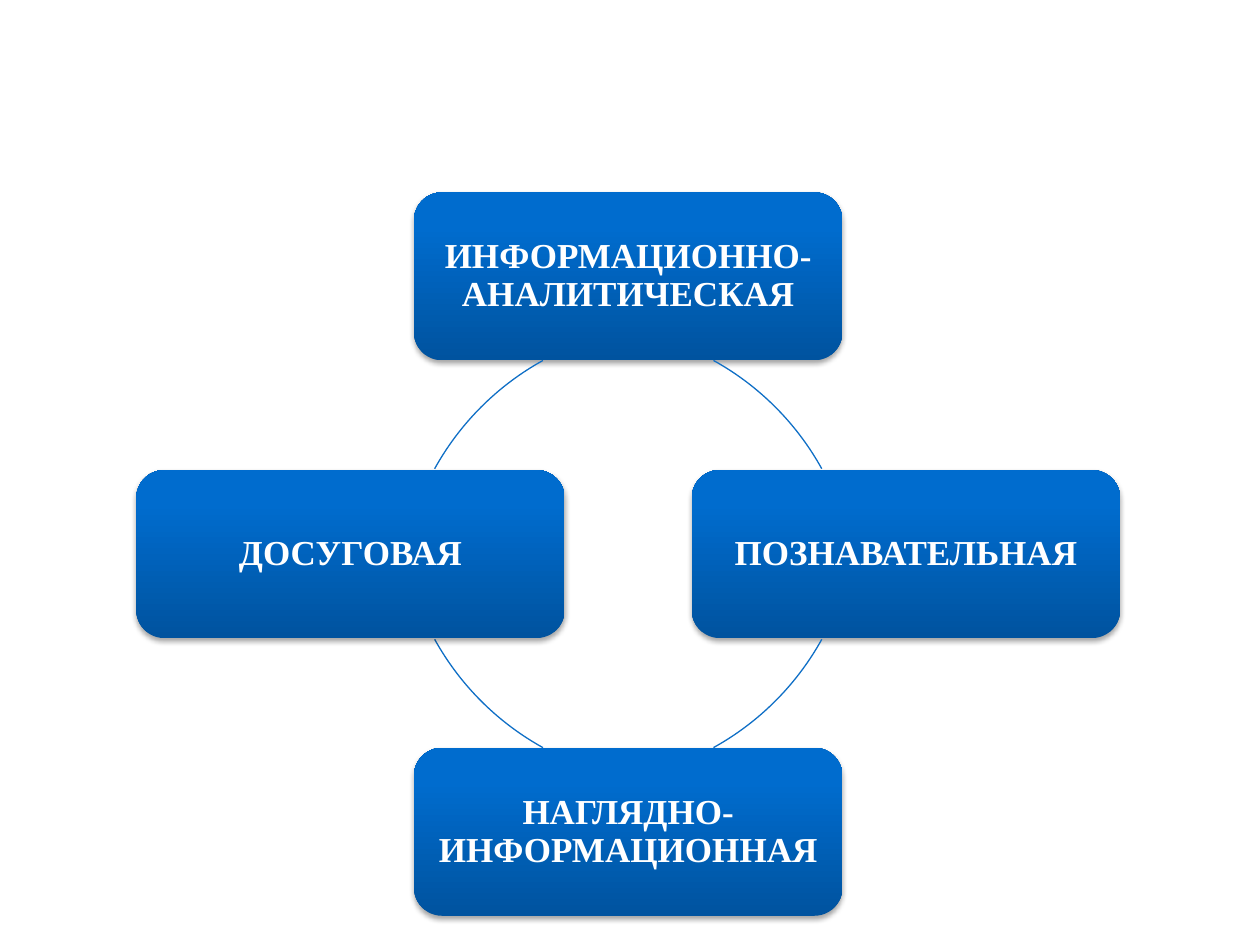
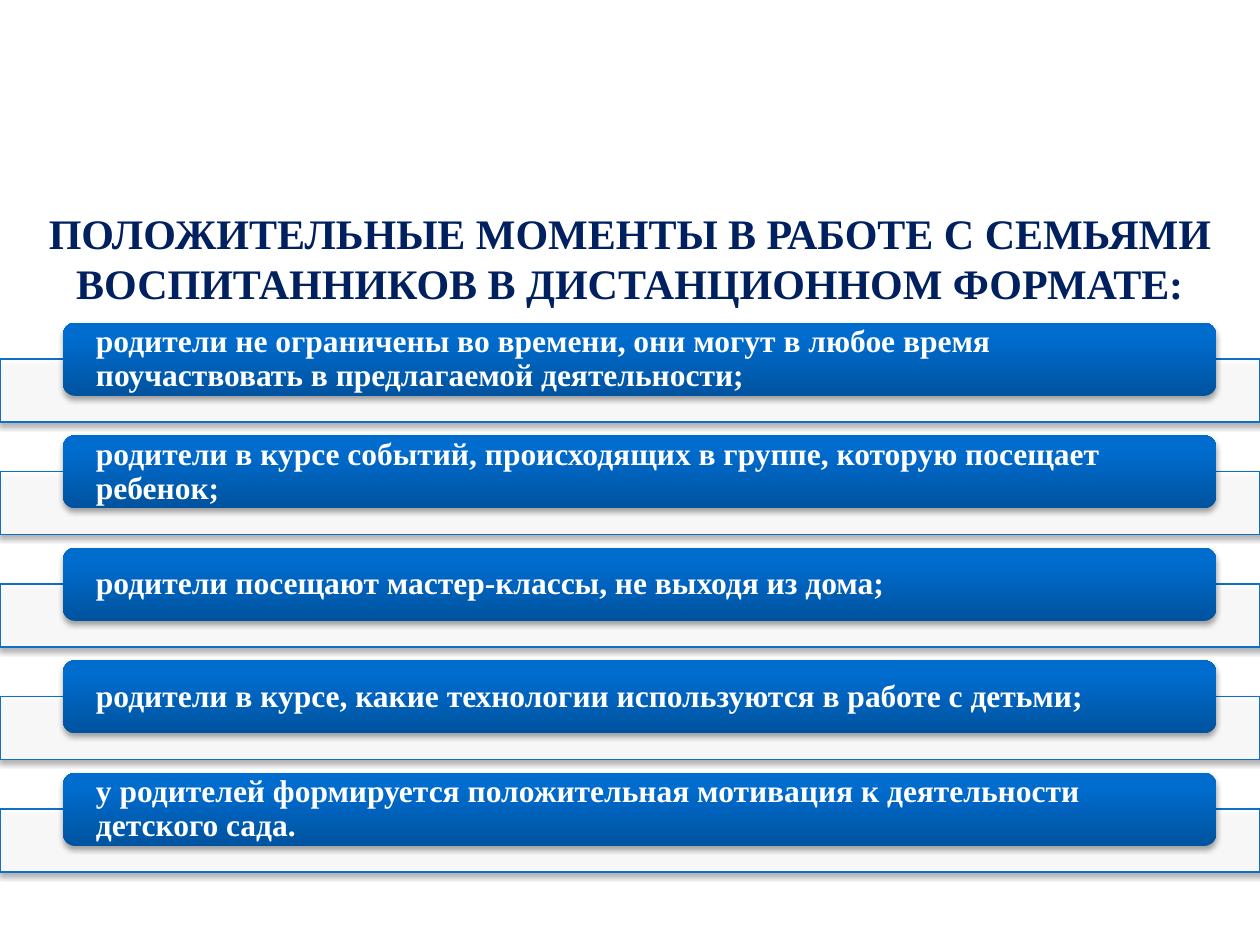
from copy import deepcopy
from lxml.etree import SubElement
from pptx import Presentation
from pptx.dml.color import RGBColor
from pptx.enum.shapes import MSO_SHAPE
from pptx.enum.text import MSO_ANCHOR, MSO_AUTO_SIZE, PP_ALIGN
from pptx.oxml.ns import qn
from pptx.util import Pt

# Shared look
WHITE, NAVY, EDGE = "FFFFFF", "002060", "0F6FC6"
STOPS = [(0, "00539F"), (0.8, "006CCE"), (1, "006DCF")]
FACE = "Times New Roman"
color = RGBColor.from_string


def add_form(slide, kind, x, y, wide, high, shade=True):
    """Add a preset shape, with a soft shadow below it if wanted."""
    form = slide.shapes.add_shape(kind, Pt(x), Pt(y), Pt(wide), Pt(high))
    form.fill.background()
    form.line.color.rgb = color(EDGE)
    form.line.width = Pt(0.75)
    form.shadow.inherit = False
    if shade:
        glow = SubElement(form._element.spPr.find(qn("a:effectLst")), qn("a:outerShdw"),
                          blurRad=str(Pt(3.1)), dist=str(Pt(1.8)),
                          dir="5400000", rotWithShape="0")
        tint = SubElement(glow, qn("a:srgbClr"), val="000000")
        SubElement(tint, qn("a:alpha"), val="35000")
    return form


def add_card(slide, x, y, wide, high, text, size, align, side):
    """Add a rounded blue card with white bold text."""
    card = add_form(slide, MSO_SHAPE.ROUNDED_RECTANGLE, x, y, wide, high)
    card.line.fill.background()
    card.fill.gradient()
    card.fill.gradient_angle = 90
    stops = card._element.spPr.find(".//" + qn("a:gsLst"))
    stops.append(deepcopy(stops[0]))
    for stop, (place, tone) in zip(card.fill.gradient_stops, STOPS):
        stop.position = place
        stop.color.rgb = color(tone)
    frame = card.text_frame
    frame.word_wrap = True
    frame.vertical_anchor = MSO_ANCHOR.MIDDLE
    frame.margin_left = frame.margin_right = Pt(side)
    frame.margin_top = frame.margin_bottom = 0
    para = frame.paragraphs[0]
    para.text = text
    para.alignment = align
    para.line_spacing = 0.9
    para.font.name, para.font.size, para.font.bold = FACE, Pt(size), True
    para.font.color.rgb = color(WHITE)


deck = Presentation()
deck.slide_width, deck.slide_height = Pt(720), Pt(540)

# Slide 1: four cards on a ring, clockwise from the top
slide = deck.slides.add_slide(deck.slide_layouts[6])
MID_X, MID_Y, RING = 359, 316.6, 158.7
CARD_W, CARD_H = 244.8, 96
SHIFT = 28.2  # each arc's circle sits off centre
cards = [
    ("ИНФОРМАЦИОННО-АНАЛИТИЧЕСКАЯ", 0, -1),
    ("ПОЗНАВАТЕЛЬНАЯ", 1, 0),
    ("НАГЛЯДНО-ИНФОРМАЦИОННАЯ", 0, 1),
    ("ДОСУГОВАЯ", -1, 0),
]
arcs = [(-1, 1), (-1, -1), (1, -1), (1, 1)]
for turn, ((text, col, row), (right, down)) in enumerate(zip(cards, arcs)):
    add_card(slide, MID_X + col * RING - CARD_W / 2, MID_Y + row * RING - CARD_H / 2,
             CARD_W, CARD_H, text, 20, PP_ALIGN.CENTER, 1)
    arc = add_form(slide, MSO_SHAPE.ARC, MID_X + right * SHIFT - RING,
                   MID_Y + down * SHIFT - RING, 2 * RING, 2 * RING, shade=False)
    for end, angle in enumerate((299, 331)):
        arc.adjustments[end] = (angle + 90 * turn) % 360 * 0.6

# Slide 2: title
slide = deck.slides.add_slide(deck.slide_layouts[5])
title = slide.shapes.title
title.left, title.top, title.width, title.height = Pt(0), Pt(114.5), Pt(720), Pt(65.5)
title.fill.solid()
title.fill.fore_color.rgb = color(WHITE)
frame = title.text_frame
frame.auto_size = MSO_AUTO_SIZE.NONE
frame.vertical_anchor = MSO_ANCHOR.MIDDLE
para = frame.paragraphs[0]
para.text = "ПОЛОЖИТЕЛЬНЫЕ МОМЕНТЫ В РАБОТЕ С СЕМЬЯМИ ВОСПИТАННИКОВ В ДИСТАНЦИОННОМ ФОРМАТЕ:"
para.alignment = PP_ALIGN.CENTER
para.font.name, para.font.size, para.font.bold = FACE, Pt(24), True
para.font.color.rgb = color(NAVY)

# Slide 2: a pale band behind each point
points = [
    "родители не ограничены во времени, они могут в любое время поучаствовать в предлагаемой деятельности;",
    "родители в курсе событий, происходящих в группе, которую посещает ребенок;",
    "родители посещают мастер-классы, не выходя из дома;",
    "родители в курсе, какие технологии используются в работе с детьми;",
    "у родителей формируется положительная мотивация к деятельности детского сада.",
]
for row, text in enumerate(points):
    top = 184.4 + 64.3 * row
    band = add_form(slide, MSO_SHAPE.RECTANGLE, 0, top + 20.8, 720, 36)
    band.fill.solid()
    band.fill.fore_color.rgb = color(WHITE)
    tint = band._element.spPr.find(qn("a:solidFill"))[0]
    SubElement(tint, qn("a:alpha"), val="90000")
    add_card(slide, 36, top, 659, 41.8, text, 18, PP_ALIGN.LEFT, 16.8)

deck.save("out.pptx")
